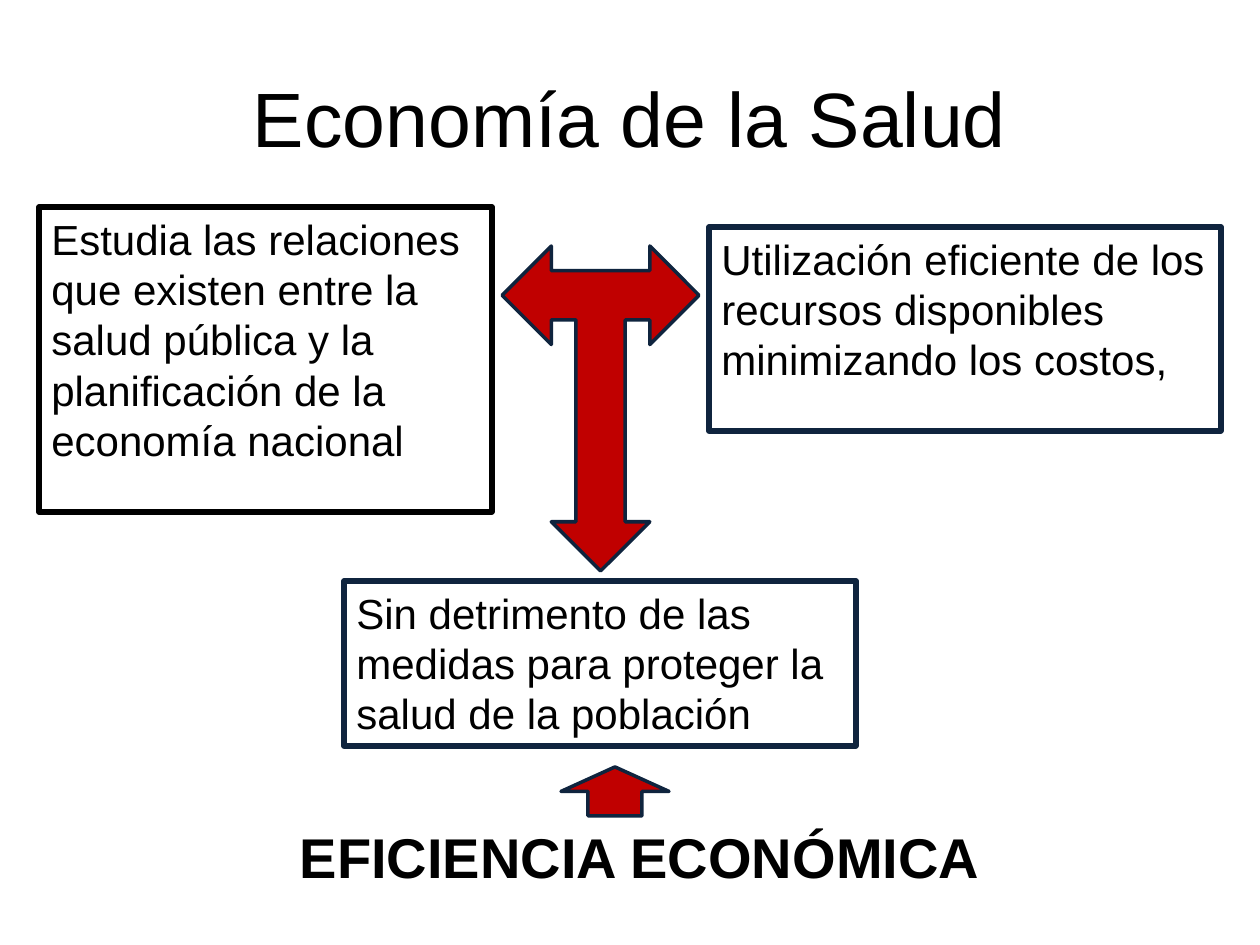
from pptx import Presentation
from pptx.dml.color import RGBColor
from pptx.enum.shapes import MSO_SHAPE
from pptx.enum.text import MSO_ANCHOR, PP_ALIGN
from pptx.util import Pt

PX = 914400 // 126  # EMU per px
COLORS = {"text": "000000", "navy": "0F243E", "red": "C00000"}
FONT = "Arial"

# Headings: text, (left, top, width, height), size, bold, anchor
HEADINGS = [
    ("Economía de la Salud", (63, 38, 1134, 158), 44, False, MSO_ANCHOR.MIDDLE),
    ("EFICIENCIA ECONÓMICA", (266, 816, 748, 81), 32, True, MSO_ANCHOR.TOP),
]

# Boxes: paragraphs, (left, top, width, height), border colour
BOXES = [
    (["Estudia las relaciones que existen entre la salud pública y la "
      "planificación de la economía nacional"], (39, 207, 453, 305), "text"),
    (["Utilización eficiente de los recursos disponibles",
      "minimizando los costos,"], (709, 227, 512, 204), "navy"),
    (["Sin detrimento de las medidas para proteger la salud de la población"],
     (344, 581, 512, 165), "navy"),
]

# Arrows: preset, (left, top, width, height), rotation
ARROWS = [
    (MSO_SHAPE.LEFT_RIGHT_UP_ARROW, (502, 246, 197, 325), 180),
    (MSO_SHAPE.UP_ARROW, (561, 767, 108, 49), 0),
]


def rgb(name):
    return RGBColor.from_string(COLORS[name])


def emu(box):
    return [v * PX for v in box]


def set_line(sp, color, width):
    sp.line.color.rgb = rgb(color)
    sp.line.width = Pt(width)


def add_text(s, paragraphs, box, size, bold=False, align=PP_ALIGN.LEFT,
             anchor=MSO_ANCHOR.TOP):
    sp = s.shapes.add_textbox(*emu(box))
    tf = sp.text_frame
    tf.word_wrap = True
    tf.vertical_anchor = anchor
    for i, text in enumerate(paragraphs):
        p = tf.add_paragraph() if i else tf.paragraphs[0]
        p.alignment = align
        r = p.add_run()
        r.text = text
        r.font.name = FONT
        r.font.size = Pt(size)
        r.font.bold = bold
        r.font.color.rgb = rgb("text")
    return sp


prs = Presentation()
prs.slide_width, prs.slide_height = emu((1260, 945))
s = prs.slides.add_slide(prs.slide_layouts[6])

# Arrows between the ideas
for preset, box, rotation in ARROWS:
    sp = s.shapes.add_shape(preset, *emu(box))
    sp.rotation = rotation
    sp.shadow.inherit = False
    sp.fill.solid()
    sp.fill.fore_color.rgb = rgb("red")
    set_line(sp, "navy", 2)

# Framed ideas
for paragraphs, box, border in BOXES:
    set_line(add_text(s, paragraphs, box, 24), border, 3)

# Title and conclusion
for text, box, size, bold, anchor in HEADINGS:
    add_text(s, [text], box, size, bold, PP_ALIGN.CENTER, anchor)

prs.save("out.pptx")
